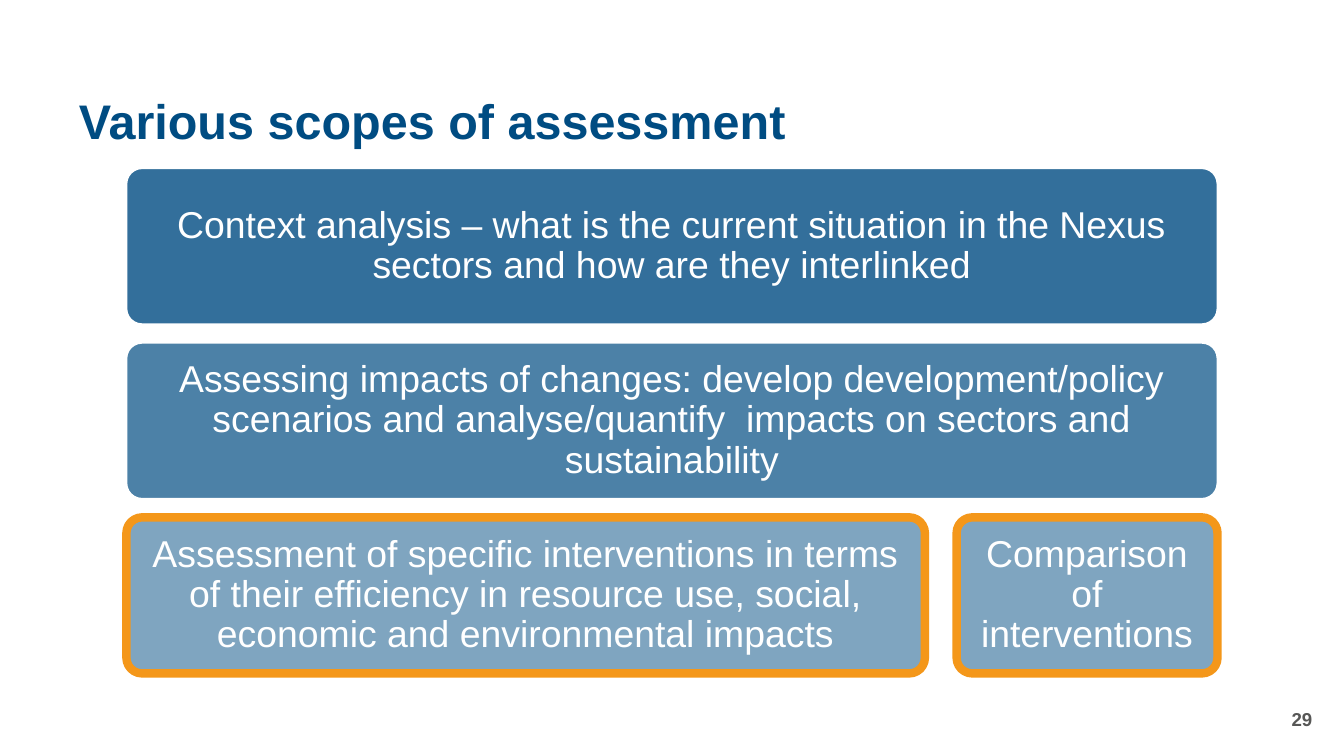
from dataclasses import dataclass

from lxml import etree
from pptx import Presentation
from pptx.dml.color import RGBColor
from pptx.enum import shapes, text
from pptx.oxml.ns import qn
from pptx.util import Cm, Pt


@dataclass(frozen=True)
class Theme:
    font: str = "Arial"
    blue: str = "004C82"
    white: str = "FFFFFF"
    orange: str = "F4971A"
    gray: str = "575756"
    head: int = 26
    body: int = 20
    small: int = 10


T = Theme()

TITLE = "Various scopes of assessment"
PAGE = "29"

# Each row: opacity in percent, line colour, line width, [(text, box width in cm)]
ROWS = [
    (80, T.white, 1, [
        ("Context analysis – what is the current situation in the Nexus "
         "sectors and how are they interlinked", 20.62)]),
    (70, T.white, 1, [
        ("Assessing impacts of changes: develop development/policy scenarios "
         "and analyse/quantify  impacts on sectors and sustainability", 20.62)]),
    (50, T.orange, 4.5, [
        ("Assessment of specific interventions in terms of their efficiency "
         "in resource use, social, economic and environmental impacts", 15.09),
        ("Comparison of interventions", 4.93)]),
]
LEFT, TOP = 2.39, 3.18
HIGH, STEP, GAP = 2.95, 3.3, 0.6
INSET = 0.2


def write(shape, words, size, color, align, bold=False, lead=None):
    frame = shape.text_frame
    frame.word_wrap = True
    frame.vertical_anchor = text.MSO_ANCHOR.MIDDLE
    frame.text = words
    para = frame.paragraphs[0]
    para.alignment = align
    para.line_spacing = lead
    font = para.runs[0].font
    font.name, font.size, font.bold = T.font, Pt(size), bold
    font.color.rgb = RGBColor.from_string(color)


def label(slide, box, *args, **more):
    write(slide.shapes.add_textbox(*map(Cm, box)), *args, **more)


def card(slide, box, words, alpha, edge, weight):
    """Add a rounded box whose blue fill has the given opacity in percent."""
    kind = shapes.MSO_SHAPE.ROUNDED_RECTANGLE
    shape = slide.shapes.add_shape(kind, *map(Cm, box))
    shape.adjustments[0] = 0.1
    shape.shadow.inherit = False
    shape.fill.solid()
    shape.fill.fore_color.rgb = RGBColor.from_string(T.blue)
    tint = shape.fill._xPr.find(qn("a:solidFill"))[0]
    etree.SubElement(tint, qn("a:alpha"), val=str(alpha * 1000))
    shape.line.color.rgb = RGBColor.from_string(edge)
    shape.line.width = Pt(weight)
    frame = shape.text_frame
    frame.margin_left = frame.margin_right = Cm(INSET)
    frame.margin_top = frame.margin_bottom = Cm(INSET)
    write(shape, words, T.body, T.white, text.PP_ALIGN.CENTER, lead=0.9)


def main():
    deck = Presentation()
    deck.slide_width, deck.slide_height = Cm(25.4), Cm(14.29)
    slide = deck.slides.add_slide(deck.slide_layouts[6])

    label(slide, (1.24, 1.6, 23.8, 1.5), TITLE, T.head, T.blue,
          text.PP_ALIGN.LEFT, bold=True, lead=0.9)
    label(slide, (19.33, 13.21, 5.72, 0.76), PAGE, T.small, T.gray,
          text.PP_ALIGN.RIGHT, bold=True)

    for row, (alpha, edge, weight, cards) in enumerate(ROWS):
        left = LEFT
        for words, wide in cards:
            box = (left, TOP + row * STEP, wide, HIGH)
            card(slide, box, words, alpha, edge, weight)
            left += wide + GAP

    deck.save("out.pptx")


if __name__ == "__main__":
    main()
